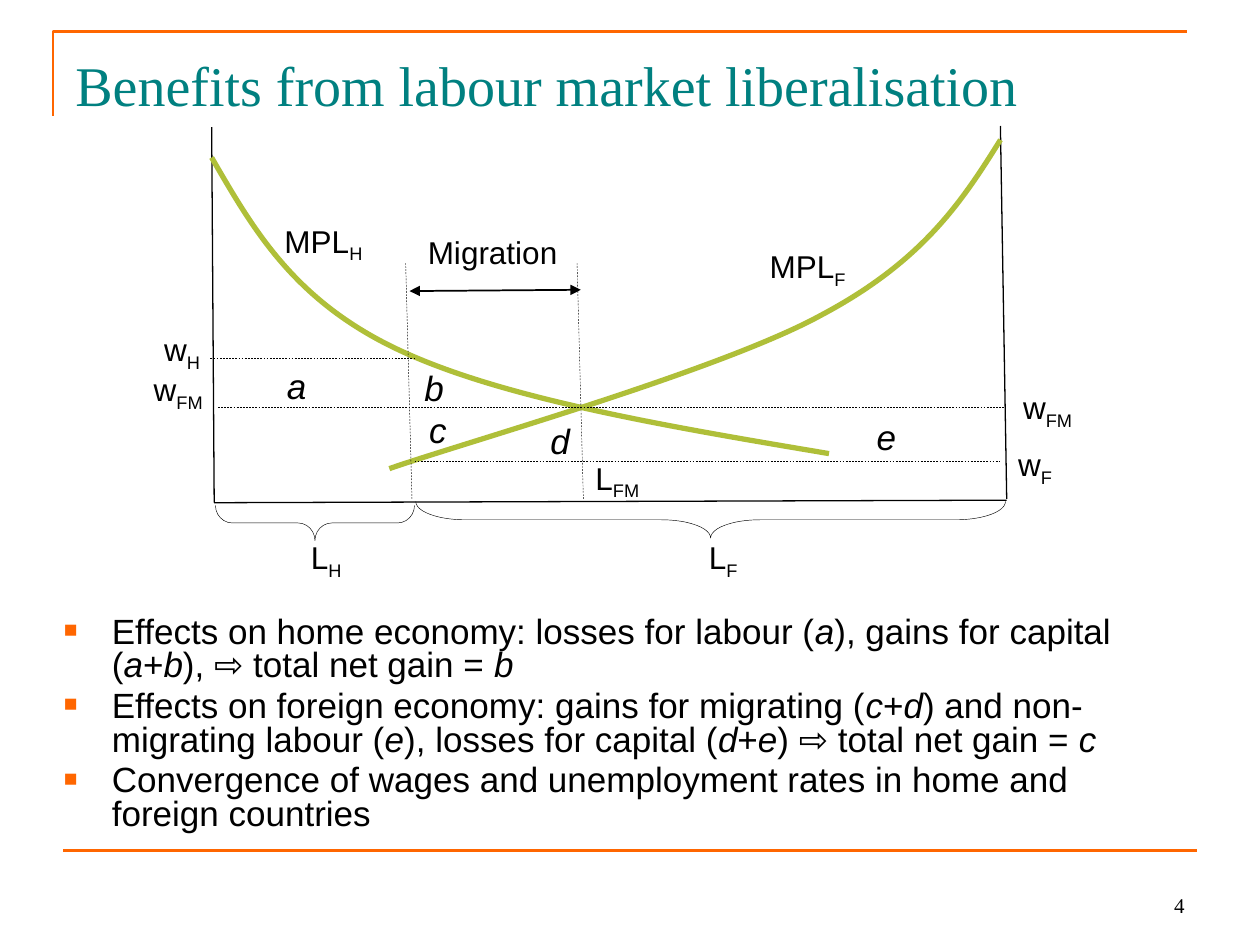
from dataclasses import dataclass

from lxml.etree import SubElement as Sub
from pptx import Presentation
from pptx.dml.color import RGBColor as RGB
from pptx.enum.dml import MSO_LINE as Dash
from pptx.enum.shapes import MSO_CONNECTOR as Conn, MSO_SHAPE as Kind
from pptx.enum.text import MSO_ANCHOR as Anchor, PP_ALIGN as Align
from pptx.oxml.ns import qn
from pptx.util import Inches, Pt


@dataclass(frozen=True)
class Theme:
    ink: str = "000000"
    title: str = "008080"
    accent: str = "FF6600"
    curve: str = "AFBF39"
    serif: str = "Times New Roman"
    sans: str = "Arial"
    head: int = 32
    body: int = 20
    label: int = 18
    small: int = 12


class Deck:
    def __init__(self, theme):
        self.theme = theme
        self.prs = Presentation()
        self.prs.slide_width, self.prs.slide_height = Inches(10), Inches(7.5)
        self.slide = self.prs.slides.add_slide(self.prs.slide_layouts[6])
        self.shapes = self.slide.shapes

    def pen(self, shape, color, width):
        shape.line.color.rgb = RGB.from_string(color)
        shape.line.width = Pt(width)

    def line(self, start, end, color=None, width=0.75, dash=False, arrows=False):
        ends = [Inches(v) for v in (*start, *end)]
        line = self.shapes.add_connector(Conn.STRAIGHT, *ends)
        self.pen(line, color or self.theme.ink, width)
        if dash:
            line.line.dash_style = Dash.DASH
        if arrows:
            for tag in ("a:headEnd", "a:tailEnd"):
                Sub(line.line._get_or_add_ln(), qn(tag), type="triangle")
        Sub(line._element.spPr, qn("a:effectLst"))

    def guide(self, start, end):
        self.line(start, end, width=0.25, dash=True)

    def outline(self, points, color, width):
        first, *rest = [(Inches(x), Inches(y)) for x, y in points]
        pen = self.shapes.build_freeform(*first)
        pen.add_line_segments(rest, close=False)
        shape = pen.convert_to_shape()
        shape.fill.background()
        self.pen(shape, color, width)
        shape.shadow.inherit = False
        return shape

    def curve(self, points):
        """Draw cubic curves: a start, then three points for each curve."""
        shape = self.outline(points, self.theme.curve, 3)
        route = next(shape._element.iter(qn("a:path")))
        steps = route.findall(qn("a:lnTo"))
        for i in range(0, len(steps), 3):
            bend = Sub(route, qn("a:cubicBezTo"))
            for step in steps[i:i + 3]:
                bend.append(step[0])
                route.remove(step)

    def brace(self, left, right, top, depth, bend):
        """Draw a brace that opens upward, as a left brace turned by 270."""
        span = right - left
        x, y = (left + right - depth) / 2, top + (depth - span) / 2
        shape = self.shapes.add_shape(
            Kind.LEFT_BRACE, Inches(x), Inches(y), Inches(depth), Inches(span))
        shape.rotation = 270
        shape.adjustments[0] = bend
        shape.fill.background()
        self.pen(shape, self.theme.ink, 0.25)
        shape.shadow.inherit = False

    def box(self, x, y, w, h, anchor=Anchor.TOP):
        frame = self.shapes.add_textbox(
            Inches(x), Inches(y), Inches(w), Inches(h)).text_frame
        frame.word_wrap = True
        frame.vertical_anchor = anchor
        return frame

    def font(self, para, size, face=None, color=None):
        para.font.size = Pt(size)
        para.font.name = face or self.theme.sans
        para.font.color.rgb = RGB.from_string(color or self.theme.ink)

    def text(self, words, x, y, w, h, size, color=None,
             align=Align.LEFT, anchor=Anchor.TOP):
        para = self.box(x, y, w, h, anchor).paragraphs[0]
        para.text, para.alignment = words, align
        self.font(para, size, self.theme.serif, color)

    def label(self, words, x, y, w, align=Align.CENTER, lead=None):
        """Write a label; what follows an underscore is lowered."""
        para = self.box(x, y, w, 0.25 if lead else 0.4).paragraphs[0]
        para.alignment, para.line_spacing = align, lead
        self.font(para, self.theme.label)
        base, _, sub = words.partition("_")
        para.add_run().text = base
        if sub:
            run = para.add_run()
            run.text = sub
            run.font._element.set("baseline", "-25000")

    def area(self, name, x, y, w=0.73):
        para = self.box(x, y, w, 0.43).paragraphs[0]
        para.text, para.alignment = name, Align.CENTER
        self.font(para, self.theme.body)
        para.font.italic = True

    def bullets(self, items, x, y, w, h):
        """Write a list; words between asterisks are italic."""
        frame = self.box(x, y, w, h)
        for i, item in enumerate(items):
            para = frame.add_paragraph() if i else frame.paragraphs[0]
            para.line_spacing, para.space_before = 0.8, Pt(4)
            self.font(para, self.theme.body)
            props = para._p.get_or_add_pPr()
            props.set("marL", str(Inches(0.38)))
            props.set("indent", str(Inches(-0.38)))
            marks = [Sub(props, qn(tag)) for tag in
                     ("a:buClr", "a:buSzPct", "a:buFont", "a:buChar")]
            Sub(marks[0], qn("a:srgbClr"), val=self.theme.accent)
            marks[1].set("val", "65000")
            marks[2].set("typeface", self.theme.sans)
            marks[3].set("char", "■")
            rest = props.find(qn("a:defRPr"))
            if rest is not None:
                props.append(rest)
            for n, part in enumerate(item.split("*")):
                if part:
                    run = para.add_run()
                    run.text = part
                    run.font.italic = n % 2 == 1


def frame(deck):
    look = deck.theme
    deck.outline([(0.42, 0.92), (0.42, 0.25), (9.42, 0.25)], look.accent, 1.5)
    deck.line((0.5, 6.75), (9.5, 6.75), look.accent, 1.5)
    deck.text("4", 7.17, 6.83, 2.33, 0.5, look.small,
              align=Align.RIGHT, anchor=Anchor.BOTTOM)
    deck.text("Benefits from labour market liberalisation", 0.5, 0.28, 9, 0.78,
              look.head, look.title, anchor=Anchor.MIDDLE)


def chart(deck):
    deck.line((1.68, 1.01), (1.7, 3.99))
    deck.line((1.7, 3.99), (7.99, 3.97))
    deck.line((7.94, 1), (7.99, 3.96))
    deck.curve([(1.68, 1.25), (2.01, 1.82), (2.33, 2.38), (3.15, 2.77),
                (3.97, 3.16), (5.27, 3.38), (6.58, 3.6)])
    deck.curve([(7.94, 1.11), (7.64, 1.59), (7.33, 2.07), (6.52, 2.5),
                (5.72, 2.94), (3.66, 3.52), (3.09, 3.72)])
    for left, right, y in ((1.67, 3.29, 2.84), (1.73, 7.97, 3.23),
                           (3.29, 7.94, 3.66)):
        deck.guide((left, y), (right, y))
    for low, high in ((3.27, 3.22), (4.63, 4.58)):
        deck.guide((low, 3.96), (high, 2.09))
    deck.line((3.25, 2.31), (4.61, 2.3), width=1, arrows=True)
    deck.brace(1.71, 3.29, 4.01, 0.28, 0.48)
    deck.brace(3.3, 7.98, 3.98, 0.29, 1.35)

    for words, x, y, w in (
            ("w_H", 1.12, 2.57, 0.65), ("w_FM", 1.03, 2.89, 0.77),
            ("w_FM", 7.85, 3.03, 0.93), ("w_F", 7.89, 3.48, 0.65),
            ("L_H", 2.17, 4.22, 0.84), ("L_F", 5.32, 4.22, 0.84),
            ("L_FM", 4.48, 3.59, 0.84)):
        deck.label(words, x, y, w)
    deck.label("MPL_H", 2.16, 1.71, 1.07, Align.LEFT)
    deck.label("MPL_F", 6.01, 1.91, 1.07, Align.LEFT)
    deck.label("Migration", 2.86, 1.93, 2.1, lead=0.5)
    deck.area("a", 2.11, 2.84, 0.49)
    for name, x, y in (("b", 3.08, 2.86), ("c", 3.11, 3.19),
                       ("d", 4.08, 3.28), ("e", 6.67, 3.25)):
        deck.area(name, x, y)


def main():
    deck = Deck(Theme())
    frame(deck)
    chart(deck)
    deck.bullets([
        "Effects on home economy: losses for labour (*a*), gains for capital "
        "(*a*+*b*), ⇨ total net gain = *b*",
        "Effects on foreign economy: gains for migrating (*c*+*d*) and "
        "non-migrating labour (*e*), losses for capital (*d*+*e*) "
        "⇨ total net gain = *c*",
        "Convergence of wages and unemployment rates in home and "
        "foreign countries",
    ], 0.41, 4.85, 9, 2.03)
    deck.prs.save("out.pptx")


if __name__ == "__main__":
    main()
